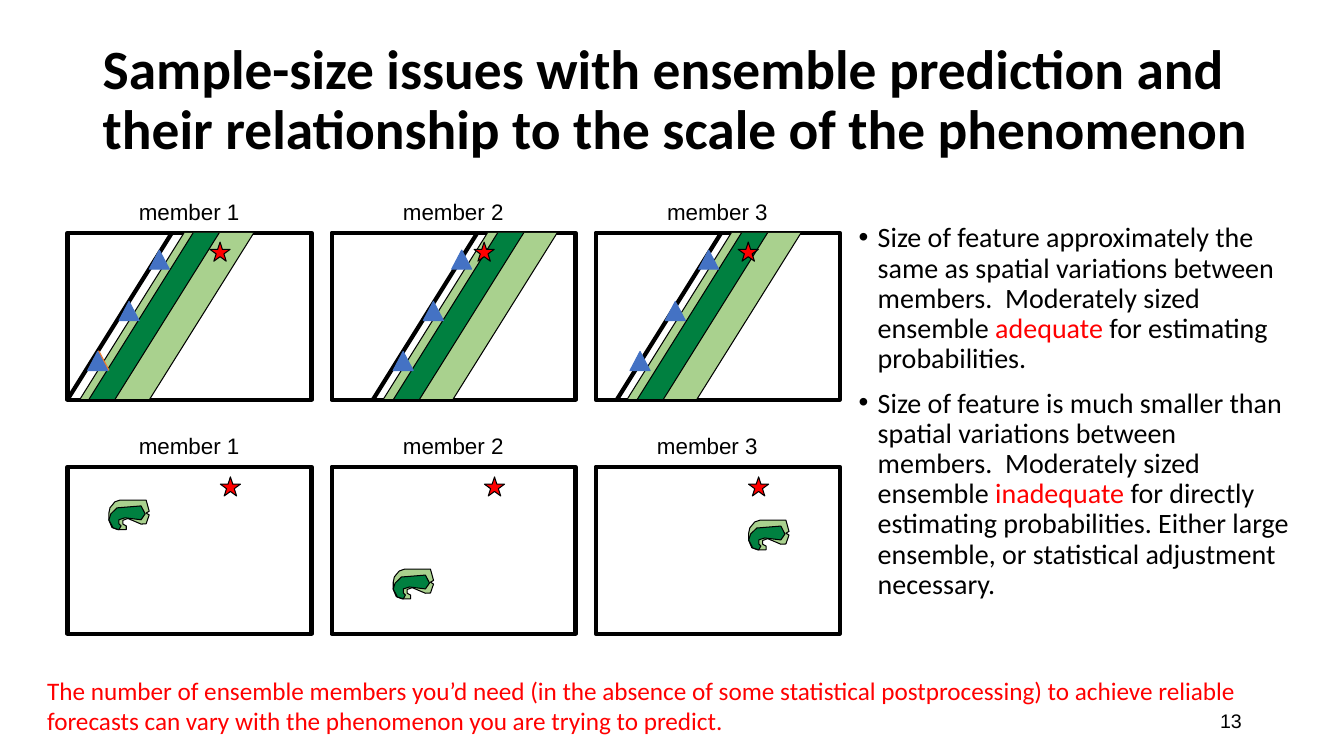
from typing import NamedTuple, Optional

from lxml import etree
from pptx import Presentation
from pptx.dml.color import RGBColor
from pptx.enum.shapes import MSO_CONNECTOR as Conn, MSO_SHAPE as Kind
from pptx.enum.text import MSO_ANCHOR as Anchor, MSO_AUTO_SIZE as Fit, PP_ALIGN as Align
from pptx.oxml.ns import qn
from pptx.util import Pt

BLACK = RGBColor(0x00, 0x00, 0x00)
RED = RGBColor(0xFF, 0x00, 0x00)
LIGHT = RGBColor(0xA9, 0xD1, 0x8E)
DARK = RGBColor(0x00, 0x80, 0x40)
BLUE = RGBColor(0x44, 0x72, 0xC4)
ORANGE = RGBColor(0xED, 0x7D, 0x31)

# Panel grid and rain band, in points
LEFT, STEP = 48.2, 188.65
WIDE, HIGH = 174.3, 119.2
TOP, LOW = 166.3, 333.4
LEAN = 74.6
MARK_W, MARK_H = 14.4, 13.7
MARK_Y = (178.6, 215.3, 251)

Point = tuple[float, float]


class Run(NamedTuple):
    text: str
    color: RGBColor = BLACK


class Member(NamedTuple):
    front: float
    light: float
    dark: float
    marks: tuple[float, float, float]
    storm: Point
    label: float  # inset of the lower label


MEMBERS = [
    Member(48.2, 56.9, 63.4, (106.6, 85, 62.6), (77.8, 357.2), 43.9),
    Member(266.4, 273.6, 280.9, (322.6, 302.4, 280.8), (280.9, 406.6), 43.9),
    Member(440.6, 447.8, 455.1, (499, 475.2, 450), (534.8, 371.6), 36.7),
]

# Storm outlines, measured from the storm's corner
OUTER = [(24.5, 0), (8, 0), (4.3, 1.3), (0.8, 5.5), (0, 9.2), (0, 14.4),
         (2.2, 19.6), (6.5, 21.2), (12.4, 21.2), (12.4, 18.5), (10, 17.2),
         (10, 14.5), (13.6, 13.2), (23, 17.2), (26.6, 17), (28.8, 10.6),
         (26.6, 9.3), (28.8, 8), (26.6, 0)]
INNER = [(23, 4.2), (5.8, 5.6), (1.4, 9.9), (0, 14.1), (2.9, 19.8),
         (7.2, 21.2), (8.7, 18.4), (7.2, 17), (7.2, 14.1), (11.5, 12.7),
         (23, 14.1), (25.9, 9.9)]

POINTS = [
    [Run("Size of feature approximately the same as spatial variations between "
         "members.  Moderately sized ensemble "),
     Run("adequate", RED), Run(" for estimating probabilities.")],
    [Run("Size of feature is much smaller than spatial variations between "
         "members.  Moderately sized ensemble "),
     Run("inadequate", RED),
     Run(" for directly estimating probabilities. Either large ensemble, "
         "or statistical adjustment necessary.")],
]
CLOSE = [
    [Run("The number of ensemble members you’d need (in the absence of some "
         "statistical postprocessing) to achieve reliable", RED)],
    [Run("forecasts can vary with the phenomenon you are trying to predict.", RED)],
]


def paint(shape, fill: Optional[RGBColor], line: RGBColor, width: float) -> None:
    shape.shadow.inherit = False
    if fill is None:
        shape.fill.background()
    else:
        shape.fill.solid()
        shape.fill.fore_color.rgb = fill
    shape.line.color.rgb = line
    shape.line.width = Pt(width)


def add_runs(para, runs: list[Run], size: float, font: str, bold: bool = False) -> None:
    for item in runs:
        run = para.add_run()
        run.text = item.text
        run.font.size, run.font.name, run.font.bold = Pt(size), font, bold
        run.font.color.rgb = item.color


def add_text(slide, x: float, y: float, w: float, h: float, paras: list[list[Run]],
             size: float, font: str, wrap: bool = False):
    frame = slide.shapes.add_textbox(Pt(x), Pt(y), Pt(w), Pt(h)).text_frame
    frame.word_wrap = wrap
    for i, runs in enumerate(paras):
        para = frame.paragraphs[0] if i == 0 else frame.add_paragraph()
        add_runs(para, runs, size, font)
    return frame


def add_mark(slide, kind: Kind, x: float, y: float, fill: RGBColor, line: RGBColor) -> None:
    mark = slide.shapes.add_shape(kind, Pt(x), Pt(y), Pt(MARK_W), Pt(MARK_H))
    paint(mark, fill, line, 0.75)


def add_path(slide, x: float, y: float, path: list[Point], fill: RGBColor,
             closed: bool) -> None:
    spots = [(Pt(x + dx), Pt(y + dy)) for dx, dy in path]
    pen = slide.shapes.build_freeform(*spots[0], scale=1.0)
    pen.add_line_segments(spots[1:], close=closed)
    paint(pen.convert_to_shape(), fill, BLACK, 0.75)


def add_band(slide, x: float, width: float, fill: RGBColor) -> None:
    path = [(LEAN, 0), (0, HIGH), (width, HIGH), (width + LEAN, 0)]
    add_path(slide, x, TOP, path, fill, False)


def add_panel(slide, x: float, y: float, name: str, inset: float) -> None:
    box = slide.shapes.add_shape(Kind.RECTANGLE, Pt(x), Pt(y), Pt(WIDE), Pt(HIGH))
    paint(box, None, BLACK, 3)
    add_text(slide, x + inset, y - 28.1, 87, 26.6, [[Run(name)]], 16, "Arial")


def add_front(slide, x: float) -> None:
    line = slide.shapes.add_connector(
        Conn.STRAIGHT, Pt(x + LEAN), Pt(TOP), Pt(x), Pt(TOP + HIGH))
    line.line.color.rgb = BLACK
    line.line.width = Pt(3)
    etree.SubElement(line._element.spPr, qn("a:effectLst"))


def add_bullet(para) -> None:
    props = para._p.get_or_add_pPr()
    props.set("marL", str(Pt(13.7)))
    props.set("indent", str(-Pt(13.7)))
    etree.SubElement(props, qn("a:buFont"), typeface="Arial")
    etree.SubElement(props, qn("a:buChar"), char="•")


def main() -> None:
    deck = Presentation()
    deck.slide_width, deck.slide_height = Pt(960), Pt(540)
    slide = deck.slides.add_slide(deck.slide_layouts[5])

    # Title
    title = slide.shapes.title
    title.left, title.top, title.width, title.height = Pt(66.2), Pt(39.6), Pt(834.5), Pt(66.2)
    frame = title.text_frame
    frame.auto_size, frame.word_wrap = Fit.NONE, True
    frame.vertical_anchor = Anchor.MIDDLE
    para = frame.paragraphs[0]
    para.alignment, para.line_spacing = Align.LEFT, 0.9
    add_runs(para, [Run("Sample-size issues with ensemble prediction and their "
                        "relationship to the scale of the phenomenon")],
             39.6, "Calibri", True)

    # Panels: broad front above, small storm below
    for i, item in enumerate(MEMBERS):
        x, name = LEFT + i * STEP, f"member {i + 1}"
        add_panel(slide, x, TOP, name, 43.9)
        add_front(slide, item.front)
        add_band(slide, item.light, 49.8, LIGHT)
        add_band(slide, item.dark, 18.6, DARK)
        add_mark(slide, Kind.STAR_5_POINT, x + 101.8, TOP + 6.6, RED, BLACK)
        if i == 0:
            add_mark(slide, Kind.ISOSCELES_TRIANGLE, 63.4, 250.6, ORANGE, ORANGE)
        for left, top in zip(item.marks, MARK_Y):
            add_mark(slide, Kind.ISOSCELES_TRIANGLE, left, top, BLUE, BLUE)

        add_panel(slide, x, LOW, name, item.label)
        add_path(slide, *item.storm, OUTER, LIGHT, True)
        add_path(slide, *item.storm, INNER, DARK, True)
        add_mark(slide, Kind.STAR_5_POINT, x + 109.2, LOW + 7.2, RED, BLACK)

    # Bullets
    body = add_text(slide, 606.2, 156.2, 324, 324, POINTS, 20, "Calibri", True)
    for i, para in enumerate(body.paragraphs):
        add_bullet(para)
        para.line_spacing = 0.9
        para.space_before = Pt(10 if i else 0)

    # Closing remark and page number
    add_text(slide, 26.6, 478.8, 874, 51, CLOSE, 18, "Calibri")
    page = add_text(slide, 678.2, 500.4, 216, 28.8, [[Run("13")]], 14, "Arial", True)
    page.vertical_anchor = Anchor.MIDDLE
    page.paragraphs[0].alignment = Align.RIGHT

    deck.save("out.pptx")


if __name__ == "__main__":
    main()
